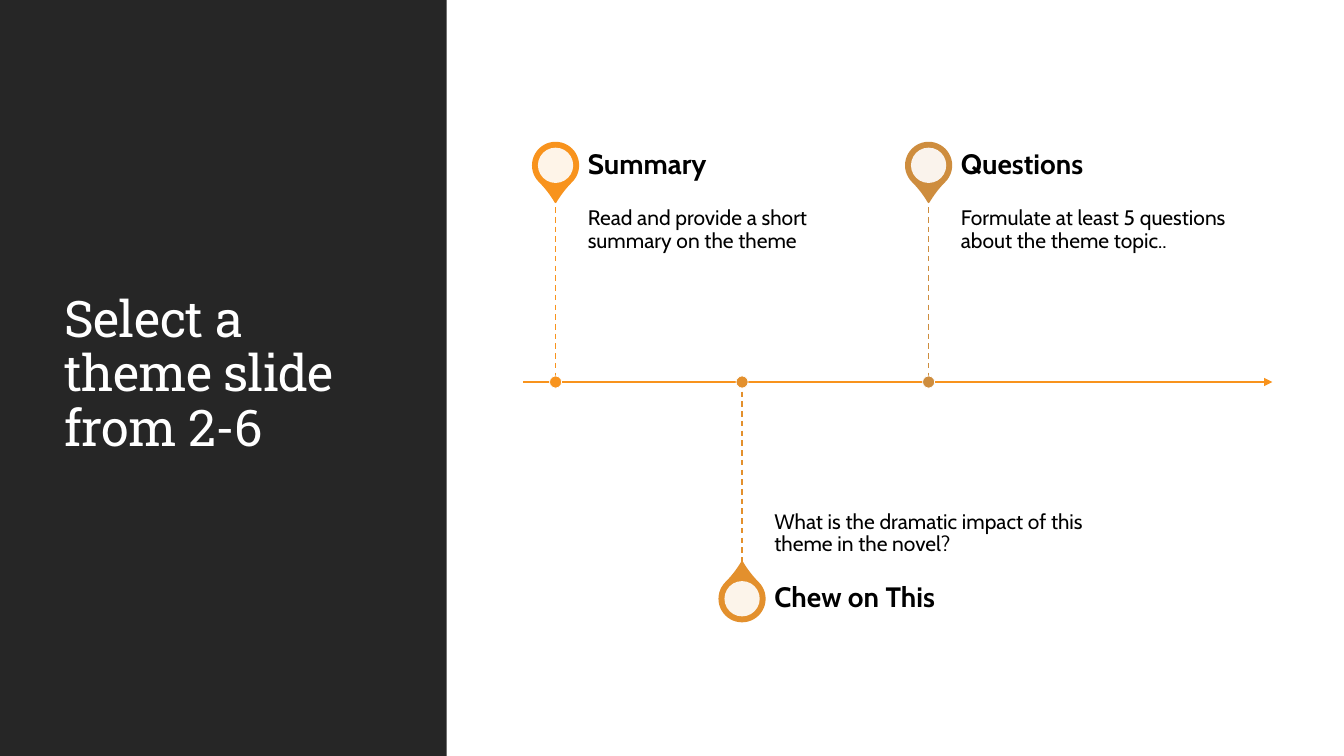
from lxml.etree import SubElement
from pptx import Presentation
from pptx.dml.color import RGBColor
from pptx.enum.dml import MSO_LINE
from pptx.enum.shapes import MSO_CONNECTOR, MSO_SHAPE
from pptx.enum.text import MSO_ANCHOR, MSO_AUTO_SIZE, PP_ALIGN
from pptx.oxml.ns import qn
from pptx.util import Inches, Pt

COLORS = {
    "panel": "262626",
    "white": "FFFFFF",
    "black": "000000",
    "orange": "F8931D",
    "amber": "E3902D",
    "bronze": "CE8D3E",
}
TITLE_FORMAT = {"name": "Roboto Slab", "size": Pt(36), "bold": False}
HEADING_FORMAT = {"name": "Cabin", "size": Pt(20), "bold": True}
BODY_FORMAT = {"name": "Cabin", "size": Pt(15), "bold": False}

AXIS_Y = 3.79
FIRST_X, STEP_X = 5.51, 1.85
TEXT_GAP, TEXT_WIDTH = 0.32, 3.08
HEADING_HEIGHT, BODY_HEIGHT = 0.64, 1.83
PIN_SIZE, HOLE_SIZE, DOT_SIZE = 0.45, 0.35, 0.12

# color, heading, body, above the axis
STEPS = [
    ("orange", "Summary", "Read and provide a short summary on the theme", True),
    ("amber", "Chew on This", "What is the dramatic impact of this theme in the novel?", False),
    ("bronze", "Questions", "Formulate at least 5 questions about the theme topic..", True),
]


def rgb(color):
    return RGBColor.from_string(COLORS[color])


class TimelineSlide:
    def __init__(self, presentation):
        self.slide = presentation.slides.add_slide(presentation.slide_layouts[5])
        self.shapes = self.slide.shapes

    def shape(self, kind, box, fill, line=None, line_width=0):
        shape = self.shapes.add_shape(kind, *map(Inches, box))
        shape.shadow.inherit = False
        shape.fill.solid()
        shape.fill.fore_color.rgb = rgb(fill)
        if line:
            shape.line.color.rgb = rgb(line)
            shape.line.width = Pt(line_width)
        else:
            shape.line.fill.background()
        return shape

    def centered(self, kind, x, y, size, *style):
        return self.shape(kind, (x - size / 2, y - size / 2, size, size), *style)

    def line(self, start, end, color, width, dash=None):
        connector = self.shapes.add_connector(
            MSO_CONNECTOR.STRAIGHT, *map(Inches, start + end))
        connector.line.color.rgb = rgb(color)
        connector.line.width = Pt(width)
        if dash:
            connector.line.dash_style = dash
        SubElement(connector.element.spPr, qn("a:effectLst"))
        return connector

    def set_text(self, shape, text, font_format, color, anchor, insets=None):
        """Fill a shape with one paragraph; insets are left, top, right, bottom."""
        frame = shape.text_frame
        frame.word_wrap = True
        frame.auto_size = MSO_AUTO_SIZE.NONE
        frame.vertical_anchor = anchor
        if insets:
            for side, inset in zip(("left", "top", "right", "bottom"), insets):
                setattr(frame, f"margin_{side}", Inches(inset))
        paragraph = frame.paragraphs[0]
        paragraph.alignment = PP_ALIGN.LEFT
        paragraph.line_spacing = 0.9
        run = paragraph.add_run()
        run.text = text
        for attribute, value in font_format.items():
            setattr(run.font, attribute, value)
        run.font.color.rgb = rgb(color)

    def text(self, box, *content):
        self.set_text(self.shapes.add_textbox(*map(Inches, box)), *content)

    def title(self, text, box):
        title = self.shapes.title
        title.left, title.top, title.width, title.height = map(Inches, box)
        self.set_text(title, text, TITLE_FORMAT, "white", MSO_ANCHOR.MIDDLE)
        for properties in title.element.iter(qn("a:rPr")):
            properties.set("spc", "-50")

    def panel(self, box):
        """Place the dark panel behind the title."""
        panel = self.shape(MSO_SHAPE.RECTANGLE, box, "panel")
        self.shapes.title.element.addprevious(panel.element)

    def axis(self, left, right):
        axis = self.line((left, AXIS_Y), (right, AXIS_Y), "orange", 1.5)
        outline = axis.element.spPr.find(qn("a:ln"))
        SubElement(outline, qn("a:tailEnd"), type="triangle")

    def pin(self, x, y, color, rotation):
        pin = self.centered(MSO_SHAPE.TEAR, x, y, PIN_SIZE, color, color, 1.25)
        pin.adjustments[0] = 1.15
        pin.rotation = rotation
        hole = self.centered(MSO_SHAPE.OVAL, x, y, HOLE_SIZE, "white")
        white = hole.element.spPr.find(qn("a:solidFill"))[0]
        SubElement(white, qn("a:alpha"), val="90000")

    def step(self, x, color, heading, body, above):
        if above:
            body_top = AXIS_Y - BODY_HEIGHT
            heading_top = body_top - HEADING_HEIGHT
            stem_end, rotation = body_top, 135
            anchor, insets = MSO_ANCHOR.TOP, (0, 0.1, 0.1, 0.16)
        else:
            body_top = AXIS_Y
            heading_top = stem_end = AXIS_Y + BODY_HEIGHT
            rotation = 315
            anchor, insets = MSO_ANCHOR.BOTTOM, (0, 0.16, 0, 0.1)
        text_left = x + TEXT_GAP
        self.pin(x, heading_top + HEADING_HEIGHT / 2, color, rotation)
        self.text((text_left, body_top, TEXT_WIDTH, BODY_HEIGHT),
                  body, BODY_FORMAT, "black", anchor, insets)
        self.text((text_left, heading_top, TEXT_WIDTH, HEADING_HEIGHT),
                  heading, HEADING_FORMAT, "black", MSO_ANCHOR.MIDDLE, (0, 0, 0.14, 0))
        top, bottom = sorted((stem_end, AXIS_Y))
        self.line((x, top), (x, bottom), color, 1, MSO_LINE.DASH)
        self.centered(MSO_SHAPE.OVAL, x, AXIS_Y, DOT_SIZE, color, "white", 0.5)


def main():
    presentation = Presentation()
    presentation.slide_width = Inches(13.33)
    presentation.slide_height = Inches(7.5)

    timeline = TimelineSlide(presentation)
    timeline.panel((0, 0, 4.43, 7.5))
    timeline.title("Select a theme slide from 2-6", (0.54, 0.57, 3.37, 6.31))
    timeline.axis(5.19, 12.62)
    for index, step in enumerate(STEPS):
        timeline.step(FIRST_X + index * STEP_X, *step)

    presentation.save("out.pptx")


if __name__ == "__main__":
    main()
